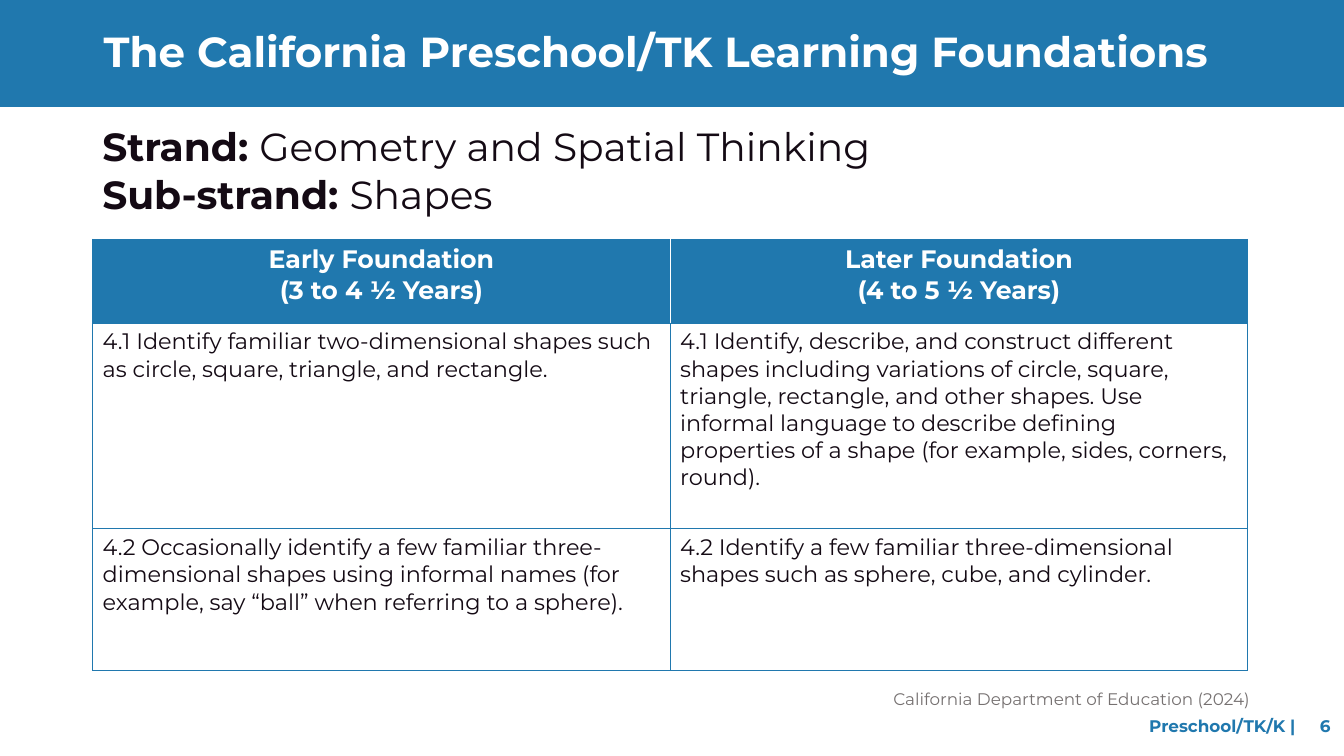
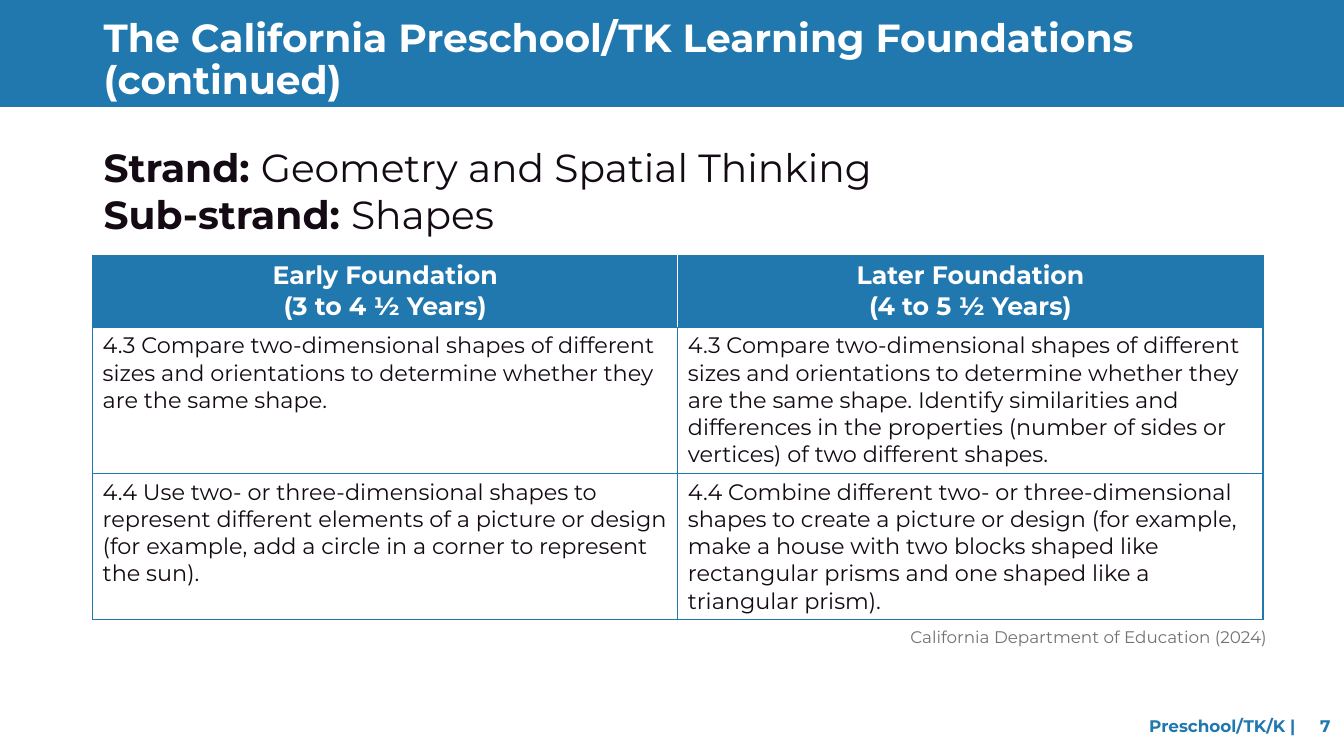
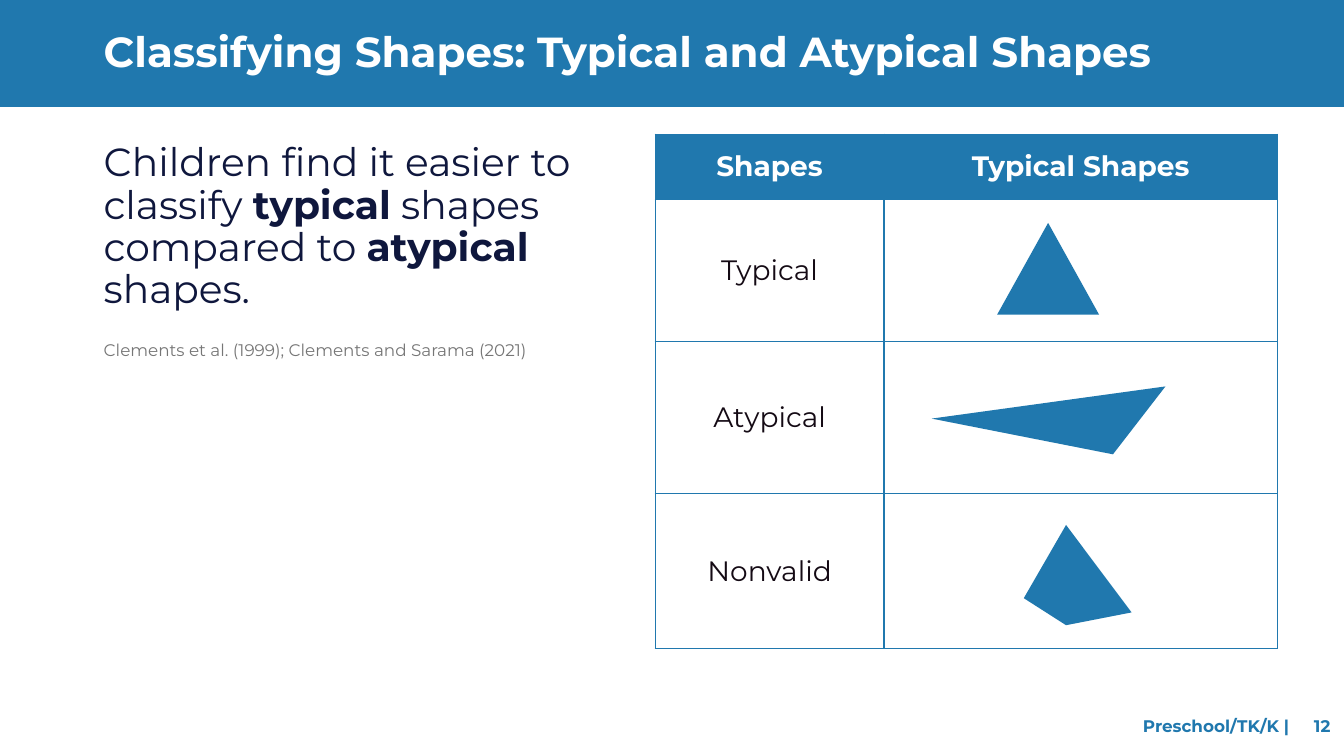
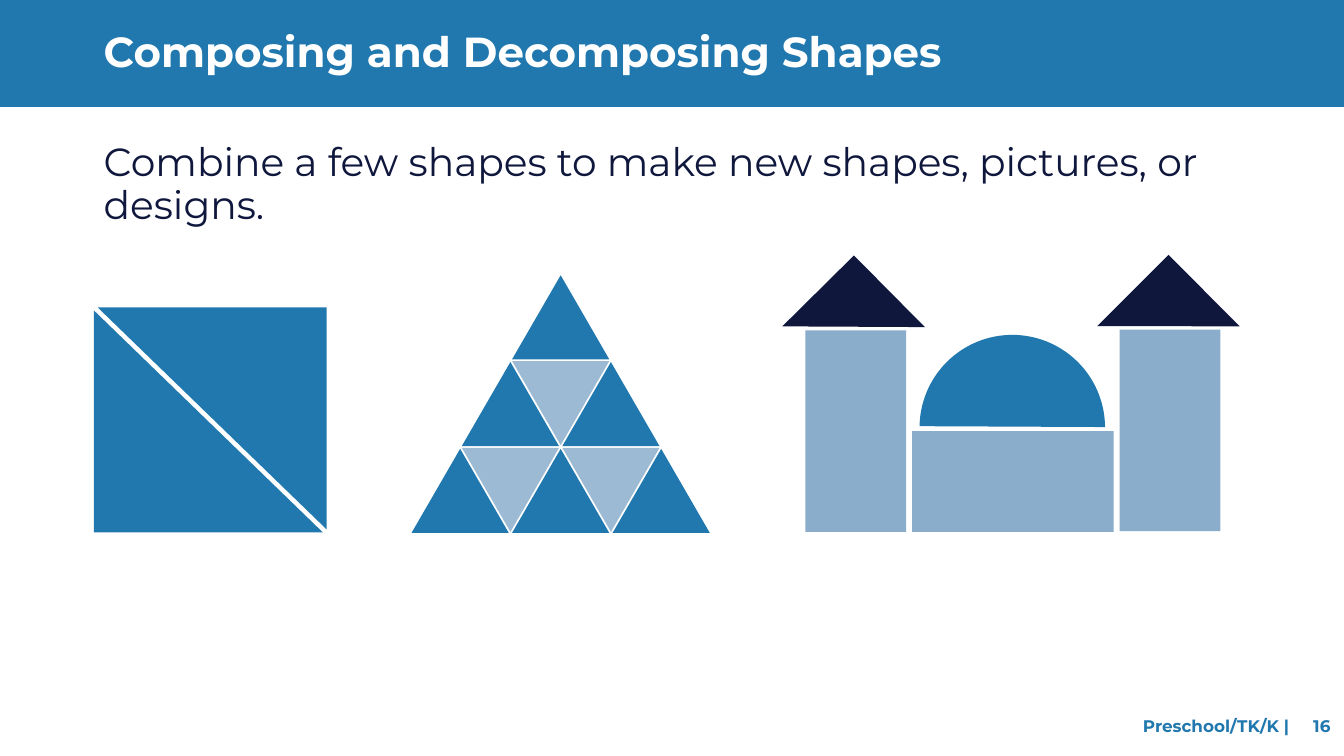
from dataclasses import dataclass
from typing import NamedTuple

from lxml import etree
from pptx import Presentation
from pptx.dml.color import RGBColor
from pptx.enum import shapes, text
from pptx.oxml import ns
from pptx.util import Pt

WHITE = RGBColor(0xFF, 0xFF, 0xFF)
BLUE = RGBColor(0x20, 0x78, 0xAE)
SKY = RGBColor(0x9D, 0xBA, 0xD4)
STONE = RGBColor(0x8A, 0xAD, 0xCB)
NAVY = RGBColor(0x0F, 0x17, 0x3D)
INK = RGBColor(0x14, 0x0A, 0x14)
GRAY = RGBColor(0x76, 0x71, 0x71)
CITATION_GRAY = RGBColor(0x76, 0x76, 0x76)

FONT = "Montserrat"
PAGE_WIDTH, PAGE_HEIGHT = 960, 540
MARGIN = 67
CONTENT_WIDTH = 853

LEFT, CENTER, RIGHT = text.PP_ALIGN.LEFT, text.PP_ALIGN.CENTER, text.PP_ALIGN.RIGHT
TOP, MIDDLE = text.MSO_ANCHOR.TOP, text.MSO_ANCHOR.MIDDLE
KIND = shapes.MSO_SHAPE

FOUNDATIONS = "The California Preschool/TK Learning Foundations"
STRAND = "**Strand: **Geometry and Spatial Thinking\n**Sub-strand: **Shapes"
HEADINGS = ("Early Foundation\n(3 to 4 ½ Years)", "Later Foundation\n(4 to 5 ½ Years)")
SOURCE = "California Department of Education (2024)"


class Area(NamedTuple):
    left: float
    top: float
    width: float
    height: float


class Piece(NamedTuple):
    kind: shapes.MSO_SHAPE
    area: Area
    color: RGBColor
    rotation: float = 0
    adjustments: tuple[float, ...] = ()


@dataclass(frozen=True)
class Grid:
    left: float
    top: float
    columns: tuple[float, ...]
    rows: tuple[float, ...]
    cells: tuple[tuple[str, ...], ...]
    header_size: float = 18
    body_size: float = 16
    body_align: text.PP_ALIGN = LEFT
    anchor: text.MSO_ANCHOR = TOP
    header_divider: RGBColor = WHITE


def write(frame, words: str, *, size: float, color: RGBColor, bold: bool = False,
          align: text.PP_ALIGN = LEFT, line_spacing: float = 1.0,
          tabs: tuple[float, ...] = ()) -> None:
    """Fill a frame; a newline starts a paragraph and ** switches bold."""
    for index, line in enumerate(words.split("\n")):
        para = frame.paragraphs[0] if index == 0 else frame.add_paragraph()
        if tabs:
            tab_list = etree.SubElement(para._p.get_or_add_pPr(), ns.qn("a:tabLst"))
            for position in tabs:
                etree.SubElement(tab_list, ns.qn("a:tab"), pos=str(Pt(position)), algn="r")
        para.alignment = align
        para.line_spacing = line_spacing
        for part, piece in enumerate(line.split("**")):
            if piece:
                span = para.add_run()
                span.text = piece
                span.font.name = FONT
                span.font.size = Pt(size)
                span.font.bold = bold != (part % 2 == 1)
                span.font.color.rgb = color


def add_text(page, area: Area, words: str, *, anchor: text.MSO_ANCHOR = TOP, **style):
    box = page.shapes.add_textbox(*map(Pt, area))
    box.text_frame.word_wrap = True
    box.text_frame.vertical_anchor = anchor
    write(box.text_frame, words, **style)
    return box


def paint(shape, color: RGBColor) -> None:
    shape.shadow.inherit = False
    shape.fill.solid()
    shape.fill.fore_color.rgb = color
    shape.line.fill.background()


def add_piece(canvas, piece: Piece) -> None:
    shape = canvas.add_shape(piece.kind, *map(Pt, piece.area))
    shape.rotation = piece.rotation
    for index, value in enumerate(piece.adjustments):
        shape.adjustments[index] = value
    paint(shape, piece.color)


def add_group(page, pieces: list[Piece]) -> None:
    group = page.shapes.add_group_shape()
    for piece in pieces:
        add_piece(group.shapes, piece)


def add_polygon(page, points: list[tuple[float, float]], color: RGBColor) -> None:
    corners = [(Pt(x), Pt(y)) for x, y in points]
    builder = page.shapes.build_freeform(*corners[0])
    builder.add_line_segments(corners[1:], close=True)
    paint(builder.convert_to_shape(), color)


def set_borders(cell, **colors: RGBColor) -> None:
    """Draw the four sides of a cell, blue unless a side (L, R, T, B) is named."""
    properties = cell._tc.get_or_add_tcPr()
    for side in "LRTB":
        line = etree.SubElement(properties, ns.qn(f"a:ln{side}"), w=str(Pt(1)))
        fill = etree.SubElement(line, ns.qn("a:solidFill"))
        etree.SubElement(fill, ns.qn("a:srgbClr"), val=str(colors.get(side, BLUE)))


def add_grid(page, grid: Grid) -> None:
    area = Area(grid.left, grid.top, sum(grid.columns), sum(grid.rows))
    table = page.shapes.add_table(len(grid.rows), len(grid.columns), *map(Pt, area)).table
    table.horz_banding = False
    for column, width in zip(table.columns, grid.columns):
        column.width = Pt(width)
    last = len(grid.columns) - 1
    for r, (height, contents) in enumerate(zip(grid.rows, grid.cells)):
        table.rows[r].height = Pt(height)
        header = r == 0
        for c, words in enumerate(contents):
            cell = table.cell(r, c)
            divider = grid.header_divider if header else BLUE
            set_borders(cell, L=divider if c > 0 else BLUE, R=divider if c < last else BLUE)
            cell.fill.solid()
            cell.fill.fore_color.rgb = BLUE if header else WHITE
            cell.vertical_anchor = grid.anchor
            write(cell.text_frame, words, bold=header,
                  size=grid.header_size if header else grid.body_size,
                  color=WHITE if header else INK,
                  align=CENTER if header else grid.body_align)


def add_page(deck, title: str, number: int, *, title_top: float = 18.7, title_size: float = 30):
    """Add a page with the title band and the footer."""
    page = deck.slides.add_slide(deck.slide_layouts[6])
    add_piece(page.shapes, Piece(KIND.RECTANGLE, Area(0, 0, PAGE_WIDTH, 76.3), BLUE))
    label_end = 239.5 - 4.5 * len(str(number))
    footer = add_text(page, Area(683.3, 504, 274.3, 28.8), f"\tPreschool/TK/K |\t{number}",
                      anchor=MIDDLE, size=12, color=BLUE, bold=True, tabs=(label_end, 260))
    footer.text_frame.margin_right = Pt(6)
    add_text(page, Area(MARGIN, title_top, CONTENT_WIDTH, 40), title,
             size=title_size, color=WHITE, bold=True, line_spacing=0.9)
    return page


def add_foundations(page, strand: Area, grid: Grid, source: Area) -> None:
    add_text(page, strand, STRAND, size=28, color=INK)
    add_grid(page, grid)
    add_text(page, source, SOURCE, size=12, color=GRAY, align=RIGHT)


def build_first_foundations(deck) -> None:
    page = add_page(deck, FOUNDATIONS, 6)
    grid = Grid(66.2, 171, (412.5, 412.5), (59.8, 147, 101), (
        HEADINGS,
        ("4.1 Identify familiar two-dimensional shapes such as circle, square, triangle, "
         "and rectangle.",
         "4.1 Identify, describe, and construct different shapes including variations of "
         "circle, square, triangle, rectangle, and other shapes. Use informal language to "
         "describe defining properties of a shape (for example, sides, corners, round)."),
        ("4.2 Occasionally identify a few familiar three-dimensional shapes using informal "
         "names (for example, say “ball” when referring to a sphere).",
         "4.2 Identify a few familiar three-dimensional shapes such as sphere, cube, "
         "and cylinder."),
    ))
    add_foundations(page, Area(66, 84.2, 840, 83), grid, Area(60, 488.2, 840, 21.6))


def build_more_foundations(deck) -> None:
    page = add_page(deck, f"{FOUNDATIONS} (continued)", 7, title_top=9.4, title_size=28)
    grid = Grid(66.2, 182.2, (418, 418), (51.5, 104.5, 104.5), (
        HEADINGS,
        ("4.3 Compare two-dimensional shapes of different sizes and orientations to "
         "determine whether they are the same shape.",
         "4.3 Compare two-dimensional shapes of different sizes and orientations to "
         "determine whether they are the same shape. Identify similarities and differences "
         "in the properties (number of sides or vertices) of two different shapes."),
        ("4.4 Use two- or three-dimensional shapes to represent different elements of a "
         "picture or design (for example, add a circle in a corner to represent the sun).",
         "4.4 Combine different two- or three-dimensional shapes to create a picture or "
         "design (for example, make a house with two blocks shaped like rectangular prisms "
         "and one shaped like a triangular prism)."),
    ))
    add_foundations(page, Area(MARGIN, 98.6, CONTENT_WIDTH, 83), grid,
                    Area(65.5, 444.2, 846.7, 21.6))


def build_classifying(deck) -> None:
    page = add_page(deck, "Classifying Shapes: Typical and Atypical Shapes", 12)
    add_text(page, Area(MARGIN, 98.6, 371, 135),
             "Children find it easier to classify **typical** shapes compared to "
             "**atypical** shapes.", size=28, color=NAVY, line_spacing=0.9)
    add_text(page, Area(MARGIN, 239, 371, 21.6),
             "Clements et al. (1999); Clements and Sarama (2021)", size=12, color=CITATION_GRAY)
    add_grid(page, Grid(
        468, 95.8, (163.5, 281), (46.5, 101.5, 108.7, 111),
        (("Shapes", "Typical Shapes"), ("Typical", ""), ("Atypical", ""), ("Nonvalid", "")),
        header_size=20, body_size=20, body_align=CENTER, anchor=MIDDLE, header_divider=BLUE))
    add_piece(page.shapes, Piece(KIND.ISOSCELES_TRIANGLE, Area(712.3, 159.2, 72.8, 65.5), BLUE))
    add_polygon(page, [(795, 324.5), (665.5, 299), (832.5, 276)], BLUE)
    add_polygon(page, [(761.5, 375), (731.3, 427.3), (761.5, 446.6), (808.3, 437.5)], BLUE)


def split_square() -> list[Piece]:
    return [Piece(KIND.ISOSCELES_TRIANGLE, Area(left, top, 163.5, 158.5), BLUE, turn, (0,))
            for left, top, turn in ((67, 221.7, 0), (69.8, 219.6, 180))]


def triangle_of_triangles() -> list[Piece]:
    apex_left, apex_top, half_step, row_step = 365.8, 196.6, 35.9, 62

    def row(level: int, count: int, top: float, color: RGBColor, turn: float) -> list[Piece]:
        left = apex_left - half_step * (count - 1)
        return [Piece(KIND.ISOSCELES_TRIANGLE,
                      Area(left + 2 * half_step * i, top + row_step * level, 69.4, 60),
                      color, turn) for i in range(count)]

    upright = [piece for level in range(3)
               for piece in row(level, level + 1, apex_top, BLUE, 0)]
    inverted = [piece for level in (1, 2)
                for piece in row(level, level, apex_top - 0.7, SKY, 180)]
    return upright + inverted


def castle() -> list[Piece]:
    return [
        Piece(KIND.RECTANGLE, Area(575.3, 236, 72, 144), STONE),
        Piece(KIND.RECTANGLE, Area(651.5, 308, 144, 72), STONE),
        Piece(KIND.RECTANGLE, Area(799.7, 235.4, 72, 144), STONE),
        Piece(KIND.CHORD, Area(656.8, 239.2, 132.5, 132.5), BLUE, 135.9, (27, 134.24)),
        Piece(KIND.RIGHT_TRIANGLE, Area(573.7, 197.4, 72, 72), NAVY, 135.3),
        Piece(KIND.RIGHT_TRIANGLE, Area(798.6, 197, 72, 72), NAVY, 135.1),
    ]


def build_composing(deck) -> None:
    page = add_page(deck, "Composing and Decomposing Shapes", 16)
    add_text(page, Area(MARGIN, 98.6, CONTENT_WIDTH, 77),
             "Combine a few shapes to make new shapes, pictures, or designs.",
             size=28, color=NAVY, line_spacing=0.9)
    for pieces in (split_square(), triangle_of_triangles(), castle()):
        add_group(page, pieces)


def main() -> None:
    deck = Presentation()
    deck.slide_width, deck.slide_height = Pt(PAGE_WIDTH), Pt(PAGE_HEIGHT)
    build_first_foundations(deck)
    build_more_foundations(deck)
    build_classifying(deck)
    build_composing(deck)
    deck.save("out.pptx")


if __name__ == "__main__":
    main()
